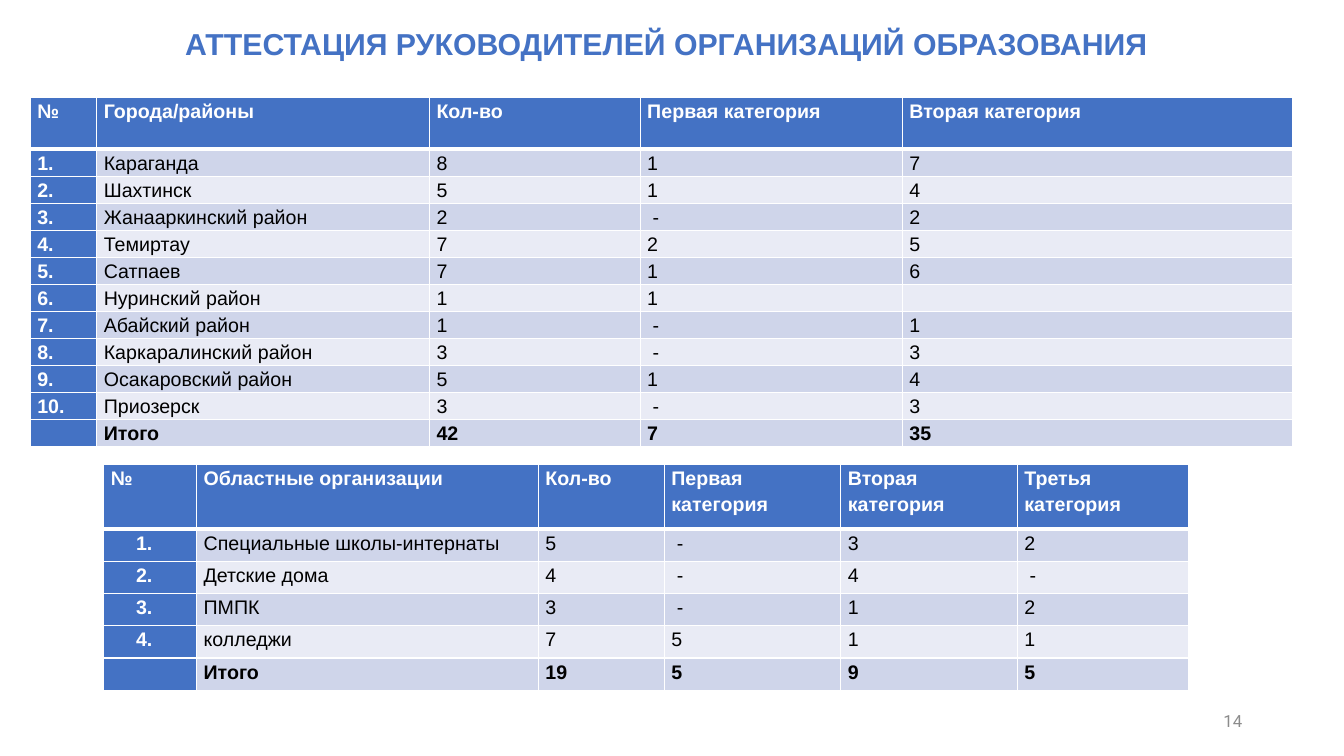
from lxml import etree
from pptx import Presentation
from pptx.dml.color import RGBColor
from pptx.enum.text import MSO_ANCHOR as ANCHOR, PP_ALIGN as ALIGN
from pptx.oxml.ns import qn
from pptx.util import Inches, Pt

BLUE, WHITE, BLACK, GREY = "4472C4", "FFFFFF", "000000", "8C8C8C"
BANDS = ("CFD5EA", "E9EBF5")


def rgb(value):
    return RGBColor.from_string(value)


def write(tf, text, size=14, font="Arial", color=BLACK, bold=False,
          align=ALIGN.LEFT, spacing=1.0, indent=0):
    p = tf.paragraphs[0]
    p.alignment = align
    p.line_spacing = spacing
    if indent:
        p._p.get_or_add_pPr().set("marL", str(Inches(indent)))
    if not text:
        etree.SubElement(p._p, qn("a:endParaRPr"), sz=str(size * 100))
        return
    r = p.add_run()
    r.text = text
    r.font.size = Pt(size)
    r.font.name = font
    r.font.bold = bold
    r.font.color.rgb = rgb(color)


def border(cell, side, width):
    tcPr = cell._tc.get_or_add_tcPr()
    ln = etree.SubElement(tcPr, qn(f"a:ln{side}"), w=str(Pt(width)))
    fill = etree.SubElement(ln, qn("a:solidFill"))
    etree.SubElement(fill, qn("a:srgbClr"), val=WHITE)


class SlideBuilder:
    def __init__(self, prs):
        self.slide = prs.slides.add_slide(prs.slide_layouts[5])

    def title(self, text, box):
        sp = self.slide.shapes.title
        sp.left, sp.top, sp.width, sp.height = map(Inches, box)
        tf = sp.text_frame
        tf.word_wrap = True
        tf.vertical_anchor = ANCHOR.TOP
        tf.margin_top = Inches(0.07)
        write(tf, text, size=21.6, color=BLUE, bold=True,
              align=ALIGN.CENTER, spacing=0.9)

    def text(self, text, box, **style):
        tf = self.slide.shapes.add_textbox(*map(Inches, box)).text_frame
        tf.word_wrap = True
        tf.vertical_anchor = ANCHOR.MIDDLE
        write(tf, text, **style)

    def table(self, rows, left, top, widths, head_height, row_height,
              number_indent=0):
        heights = [head_height] + [row_height] * (len(rows) - 1)
        frame = self.slide.shapes.add_table(
            len(rows), len(widths), Inches(left), Inches(top),
            Inches(sum(widths)), Inches(sum(heights)))
        table = frame.table
        for column, width in zip(table.columns, widths):
            column.width = Inches(width)
        for i, (row, height) in enumerate(zip(rows, heights)):
            table.rows[i].height = Inches(height)
            for j, text in enumerate(row):
                self.cell(table.cell(i, j), text, i, j,
                          i == len(rows) - 1, number_indent)

    def cell(self, cell, text, i, j, is_total, number_indent):
        is_head = i == 0
        is_blue = is_head or j == 0
        cell.margin_left = cell.margin_right = Inches(0.07)
        cell.margin_top = cell.margin_bottom = 0
        for side in "LRTB":
            thick = (i, side) in ((0, "B"), (1, "T"))
            border(cell, side, 3 if thick else 1)
        cell.fill.solid()
        cell.fill.fore_color.rgb = rgb(BLUE if is_blue else BANDS[(i - 1) % 2])
        write(cell.text_frame, text, color=WHITE if is_blue else BLACK,
              bold=is_blue or is_total, spacing=1.15,
              indent=number_indent if j == 0 and not is_head else 0)


DISTRICTS = [
    ("№", "Города/районы", "Кол-во", "Первая категория", "Вторая категория"),
    ("1.", "Караганда", "8", "1", "7"),
    ("2.", "Шахтинск", "5", "1", "4"),
    ("3.", "Жанааркинский район", "2", " -", "2"),
    ("4.", "Темиртау", "7", "2", "5"),
    ("5.", "Сатпаев", "7", "1", "6"),
    ("6.", "Нуринский район", "1", "1", ""),
    ("7.", "Абайский район", "1", " -", "1"),
    ("8.", "Каркаралинский район", "3", " -", "3"),
    ("9.", "Осакаровский район", "5", "1", "4"),
    ("10.", "Приозерск", "3", " -", "3"),
    ("", "Итого", "42", "7", "35"),
]
REGIONAL = [
    ("№", "Областные организации", "Кол-во", "Первая категория",
     "Вторая категория", "Третья категория"),
    ("1.", "Специальные школы-интернаты", "5", " -", "3", "2"),
    ("2.", "Детские дома", "4", " -", "4", " -"),
    ("3.", "ПМПК", "3", " -", "1", "2"),
    ("4.", "колледжи", "7", "5", "1", "1"),
    ("", "Итого", "19", "5", "9", "5"),
]


def main():
    prs = Presentation()
    prs.slide_width, prs.slide_height = Inches(13.33), Inches(7.5)
    s = SlideBuilder(prs)
    s.title("АТТЕСТАЦИЯ РУКОВОДИТЕЛЕЙ ОРГАНИЗАЦИЙ ОБРАЗОВАНИЯ",
            (0.37, 0.22, 12.48, 0.79))
    s.text("14", (9.42, 6.95, 3, 0.4), size=12, font="Roboto", color=GREY,
           align=ALIGN.RIGHT)
    s.table(DISTRICTS, 0.3, 0.97, (0.66, 3.3, 2.09, 2.6, 3.87), 0.51, 0.25)
    s.table(REGIONAL, 1.03, 4.61, (0.92, 3.39, 1.25, 1.75, 1.75, 1.7),
            0.64, 0.32, number_indent=0.25)
    prs.save("out.pptx")


if __name__ == "__main__":
    main()
